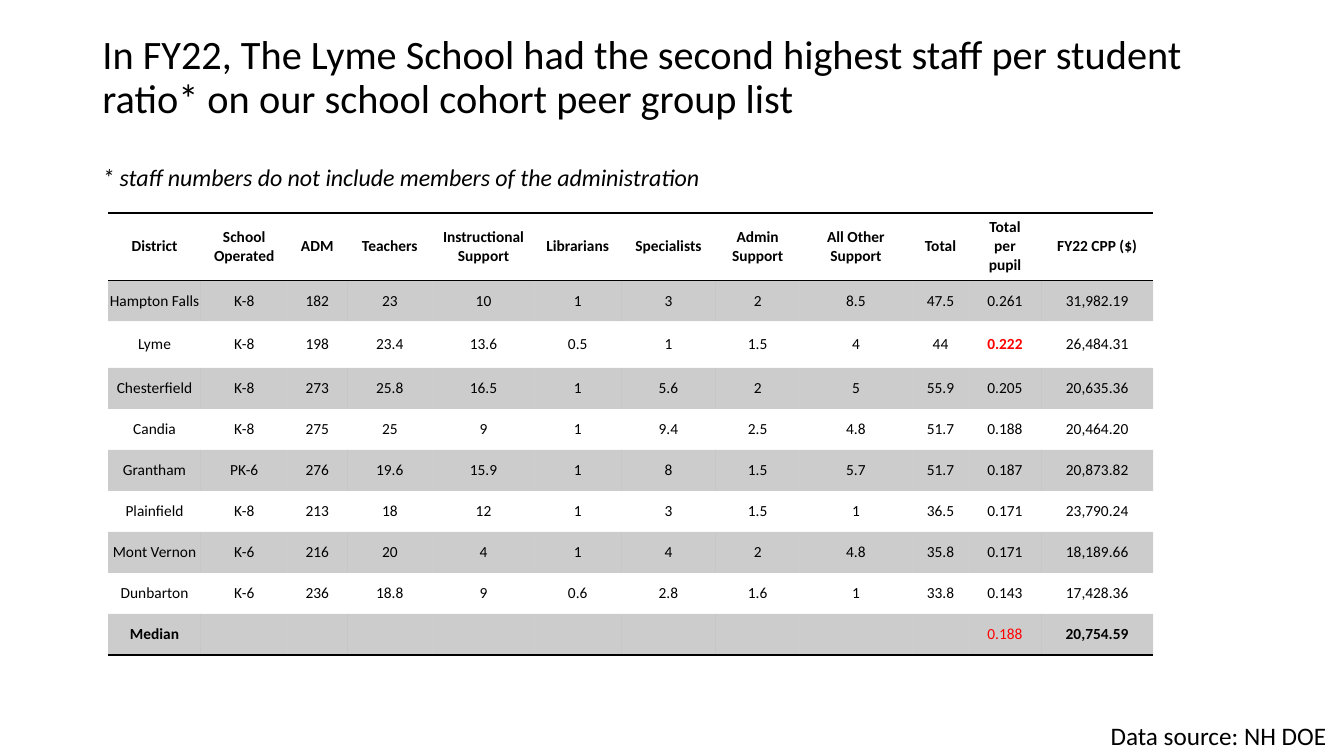
from dataclasses import astuple, dataclass

from lxml.etree import SubElement
from pptx import Presentation
from pptx.dml.color import RGBColor
from pptx.enum.text import MSO_ANCHOR, MSO_AUTO_SIZE, PP_ALIGN
from pptx.oxml.ns import qn
from pptx.util import Pt


@dataclass(frozen=True)
class Theme:
    font: str = "Calibri"
    text: str = "000000"
    accent: str = "FF0000"
    rule: str = "000000"
    rule_width: float = 1
    band: str = "000000"
    band_alpha: int = 20
    title_size: float = 28.8
    note_size: float = 17.1
    source_size: float = 18
    table_size: float = 11
    no_grid_style: str = "{2D5ABB26-0587-4C30-8999-92F81FD0307C}"


@dataclass(frozen=True)
class Column:
    heading: str
    width: float


@dataclass(frozen=True)
class District:
    name: str
    grades: str = ""
    adm: str = ""
    teachers: str = ""
    instructional: str = ""
    librarians: str = ""
    specialists: str = ""
    admin: str = ""
    other: str = ""
    total: str = ""
    per_pupil: str = ""
    cpp: str = ""


THEME = Theme()
HEADER_HEIGHT, ROW_HEIGHT, LYME_HEIGHT = 47.6, 29.3, 33.4
PER_PUPIL = 10

COLUMNS = [
    Column("District", 66.2), Column("School Operated", 61.9),
    Column("ADM", 42.5), Column("Teachers", 61.2),
    Column("Instructional Support", 72.7), Column("Librarians", 61.9),
    Column("Specialists", 67.7), Column("Admin Support", 59.8),
    Column("All Other Support", 80.6), Column("Total", 40.3),
    Column("Total per pupil", 51.8), Column("FY22 CPP ($)", 79.9),
]

DISTRICTS = [
    District("Hampton Falls", "K-8", "182", "23", "10", "1", "3", "2", "8.5", "47.5", "0.261", "31,982.19"),
    District("Lyme", "K-8", "198", "23.4", "13.6", "0.5", "1", "1.5", "4", "44", "0.222", "26,484.31"),
    District("Chesterfield", "K-8", "273", "25.8", "16.5", "1", "5.6", "2", "5", "55.9", "0.205", "20,635.36"),
    District("Candia", "K-8", "275", "25", "9", "1", "9.4", "2.5", "4.8", "51.7", "0.188", "20,464.20"),
    District("Grantham", "PK-6", "276", "19.6", "15.9", "1", "8", "1.5", "5.7", "51.7", "0.187", "20,873.82"),
    District("Plainfield", "K-8", "213", "18", "12", "1", "3", "1.5", "1", "36.5", "0.171", "23,790.24"),
    District("Mont Vernon", "K-6", "216", "20", "4", "1", "4", "2", "4.8", "35.8", "0.171", "18,189.66"),
    District("Dunbarton", "K-6", "236", "18.8", "9", "0.6", "2.8", "1.6", "1", "33.8", "0.143", "17,428.36"),
    District("Median", per_pupil="0.188", cpp="20,754.59"),
]


def write(p, text: str, *, size: float, color: str = THEME.text, bold: bool = False,
          italic: bool = False, align=PP_ALIGN.LEFT) -> None:
    p.alignment = align
    r = p.add_run()
    r.text = text
    f = r.font
    f.name, f.size, f.bold, f.italic = THEME.font, Pt(size), bold, italic
    f.color.rgb = RGBColor.from_string(color)


def place(sp, left: float, top: float, width: float, height: float) -> None:
    sp.left, sp.top, sp.width, sp.height = Pt(left), Pt(top), Pt(width), Pt(height)


def add_rule(cell, tag: str) -> None:
    ln = SubElement(cell._tc.get_or_add_tcPr(), qn(tag), w=str(Pt(THEME.rule_width)))
    fill = SubElement(ln, qn("a:solidFill"))
    SubElement(fill, qn("a:srgbClr"), val=THEME.rule)


def shade(cell) -> None:
    cell.fill.solid()
    cell.fill.fore_color.rgb = RGBColor.from_string(THEME.band)
    color = cell._tc.tcPr.find(".//" + qn("a:solidFill") + "/" + qn("a:srgbClr"))
    for clr in cell._tc.tcPr.findall(qn("a:solidFill") + "/" + qn("a:srgbClr")):
        color = clr
    SubElement(color, qn("a:alpha"), val=str(THEME.band_alpha * 1000))


def fill_cell(cell, text: str, *, rules: tuple[str, ...] = (), shaded: bool = False,
              margin: bool = False, color: str = THEME.text, bold: bool = False) -> None:
    cell.vertical_anchor = MSO_ANCHOR.MIDDLE
    if not margin:
        cell.margin_left = cell.margin_right = cell.margin_top = cell.margin_bottom = 0
    for tag in rules:
        add_rule(cell, tag)
    if shaded:
        shade(cell)
    else:
        cell.fill.background()
    if text:
        write(cell.text_frame.paragraphs[0], text, size=THEME.table_size,
              color=color, bold=bold, align=PP_ALIGN.CENTER)


def add_title(s) -> None:
    sp = s.shapes.title
    place(sp, 66, 28.8, 828, 104.4)
    tf = sp.text_frame
    tf.auto_size, tf.vertical_anchor = MSO_AUTO_SIZE.NONE, MSO_ANCHOR.MIDDLE
    p = tf.paragraphs[0]
    p.line_spacing = 0.9
    write(p, "In FY22, The Lyme School had the second highest staff per student "
             "ratio* on our school cohort peer group list", size=THEME.title_size)
    p = tf.add_paragraph()
    p.line_spacing, p.space_before = 0.9, Pt(31.6)
    write(p, "* staff numbers do not include members of the administration",
          size=THEME.note_size, italic=True)


def add_staff_table(s) -> None:
    heights = [HEADER_HEIGHT] + [
        LYME_HEIGHT if d.name == "Lyme" else ROW_HEIGHT for d in DISTRICTS]
    table = s.shapes.add_table(
        len(heights), len(COLUMNS), Pt(77.3), Pt(152.2),
        Pt(sum(c.width for c in COLUMNS)), Pt(sum(heights))).table
    table.horz_banding = False
    table._tbl.tblPr.find(qn("a:tableStyleId")).text = THEME.no_grid_style
    for row, height in zip(table.rows, heights):
        row.height = Pt(height)

    # Headings
    for i, column in enumerate(COLUMNS):
        table.columns[i].width = Pt(column.width)
        fill_cell(table.cell(0, i), column.heading, rules=("a:lnT", "a:lnB"),
                  margin=True, bold=True)

    # Districts and median
    for n, district in enumerate(DISTRICTS, 1):
        lyme, median = district.name == "Lyme", district.name == "Median"
        for i, text in enumerate(astuple(district)):
            red = i == PER_PUPIL and (lyme or median)
            fill_cell(table.cell(n, i), text, shaded=n % 2 == 1,
                      rules=("a:lnB",) if median else (),
                      color=THEME.accent if red else THEME.text,
                      bold=red if lyme else median and not red)


def add_source(s) -> None:
    tf = s.shapes.add_textbox(Pt(786.2), Pt(511.2), Pt(170.6), Pt(28.8)).text_frame
    tf.word_wrap, tf.auto_size = False, MSO_AUTO_SIZE.SHAPE_TO_FIT_TEXT
    write(tf.paragraphs[0], "Data source: NH DOE", size=THEME.source_size)


def main() -> None:
    prs = Presentation()
    prs.slide_width, prs.slide_height = Pt(960), Pt(540)
    s = prs.slides.add_slide(prs.slide_layouts[5])
    add_title(s)
    add_staff_table(s)
    add_source(s)
    prs.save("out.pptx")


if __name__ == "__main__":
    main()
